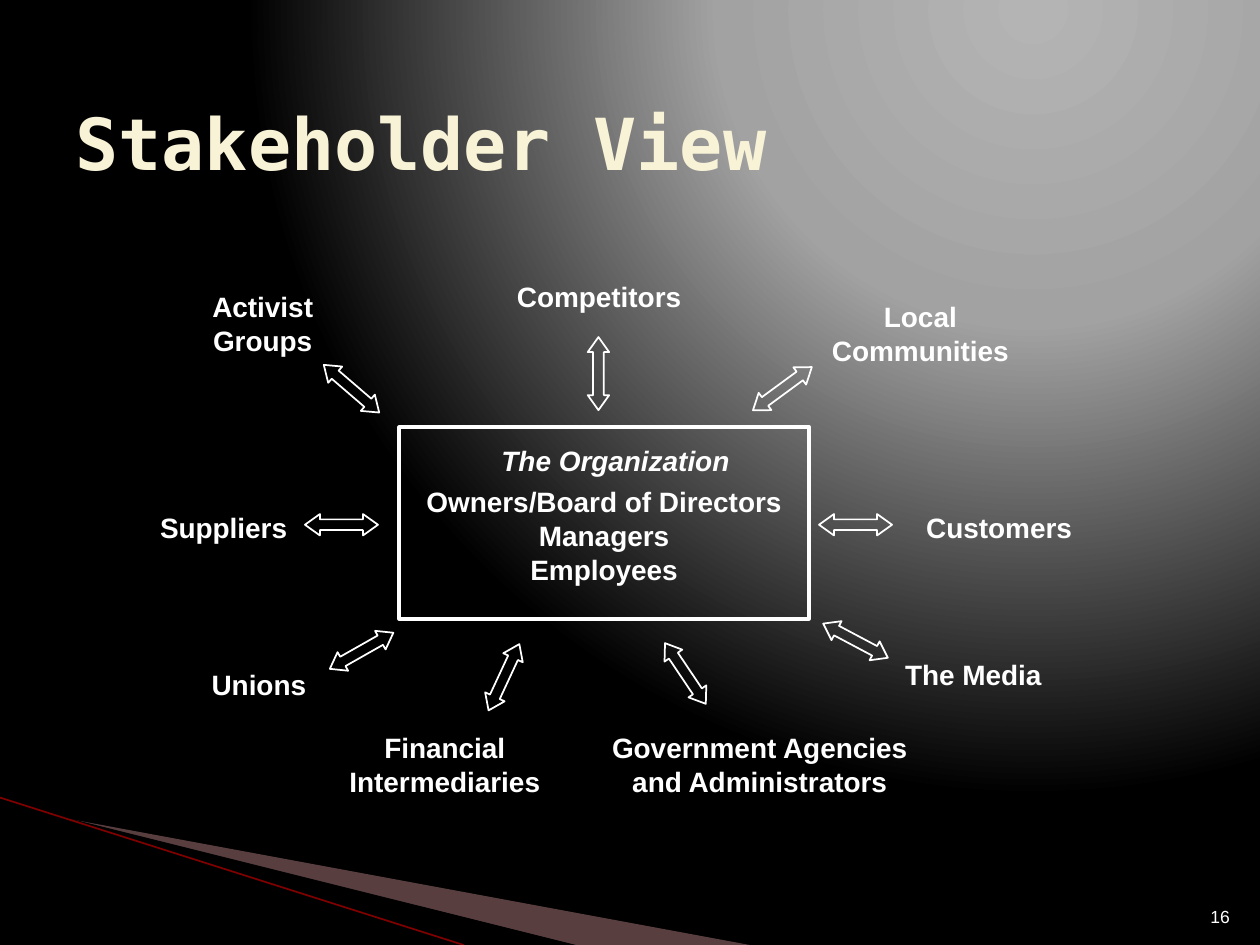
from lxml import etree
from pptx import Presentation
from pptx import util as u
from pptx.dml.color import RGBColor
from pptx.enum import shapes, text
from pptx.oxml.ns import qn

WHITE = RGBColor(0xFF, 0xFF, 0xFF)
BLACK = RGBColor(0, 0, 0)
CREAM = RGBColor(0xF8, 0xF3, 0xD7)
ROSE = RGBColor(0xDD, 0x9D, 0x9D)
DARK_RED = RGBColor(0x80, 0, 0)
LIGHT_GREY = RGBColor(0xB4, 0xB4, 0xB4)
MID_GREY = RGBColor(0xA2, 0xA2, 0xA2)


def write(frame, words, size=16, font="Arial", color=WHITE, bold=True, italic=False,
          align=text.PP_ALIGN.CENTER):
    for index, line in enumerate(words.split("\n")):
        paragraph = frame.paragraphs[0] if index == 0 else frame.add_paragraph()
        paragraph.alignment = align
        run = paragraph.add_run()
        run.text = line
        run.font.size = u.Pt(size)
        run.font.name = font
        run.font.color.rgb = color
        run.font.bold = bold
        run.font.italic = italic


class StakeholderSlide:
    outline = WHITE

    def __init__(self, slide):
        self.slide = slide
        self.shapes = slide.shapes

    def glow(self, stops, focus):
        self.slide.background.fill.gradient()
        gradient = self.slide.element.find(".//" + qn("a:gradFill"))
        for child in list(gradient):
            gradient.remove(child)
        stop_list = etree.SubElement(gradient, qn("a:gsLst"))
        for percent, color in stops:
            stop = etree.SubElement(stop_list, qn("a:gs"), pos=str(percent * 1000))
            etree.SubElement(stop, qn("a:srgbClr"), val=str(color))
        circle = etree.SubElement(gradient, qn("a:path"), path="circle")
        edges = {side: str(percent * 1000) for side, percent in zip("ltrb", focus)}
        etree.SubElement(circle, qn("a:fillToRect"), **edges)

    def wedge(self, points, color, opacity=100):
        corners = [(u.Inches(x), u.Inches(y)) for x, y in points]
        builder = self.shapes.build_freeform(*corners[0])
        builder.add_line_segments(corners[1:], close=True)
        wedge = builder.convert_to_shape()
        wedge.shadow.inherit = False
        wedge.fill.solid()
        wedge.fill.fore_color.rgb = color
        wedge.line.fill.background()
        if opacity < 100:
            tint = wedge.fill._xPr.find(".//" + qn("a:srgbClr"))
            etree.SubElement(tint, qn("a:alpha"), val=str(opacity * 1000))

    def line(self, start, end, color, width):
        ends = [u.Inches(value) for value in (*start, *end)]
        line = self.shapes.add_connector(shapes.MSO_CONNECTOR.STRAIGHT, *ends)
        line.line.color.rgb = color
        line.line.width = u.Pt(width)
        etree.SubElement(line._element.spPr, qn("a:effectLst"))

    def label(self, words, box, anchor=text.MSO_ANCHOR.TOP, wrap=False, **style):
        frame = self.shapes.add_textbox(*map(u.Inches, box)).text_frame
        frame.word_wrap = wrap
        frame.auto_size = (text.MSO_AUTO_SIZE.NONE if wrap
                           else text.MSO_AUTO_SIZE.SHAPE_TO_FIT_TEXT)
        frame.vertical_anchor = anchor
        write(frame, words, **style)

    def outlined(self, kind, box, width):
        shape = self.shapes.add_shape(kind, *map(u.Inches, box))
        shape.shadow.inherit = False
        shape.fill.background()
        shape.line.color.rgb = self.outline
        shape.line.width = u.Pt(width)
        return shape

    def arrow(self, left, top, rotation):
        arrow = self.outlined(shapes.MSO_SHAPE.LEFT_RIGHT_ARROW, (left, top, 0.58, 0.17), 1)
        arrow.adjustments[0] = 0.5
        arrow.adjustments[1] = 0.7
        arrow.rotation = rotation


STAKEHOLDERS = [
    ("Financial\nIntermediaries", (2.67, 5.75, 1.72, 0.64), (3.71, 5.29, 294.9)),
    ("Government Agencies\nand Administrators", (4.75, 5.75, 2.56, 0.64), (5.15, 5.26, 236.1)),
    ("Local\nCommunities", (6.5, 2.33, 1.61, 0.64), (5.92, 3, 323.7)),
    ("Competitors", (4, 2.17, 1.51, 0.37), (4.46, 2.88, 270)),
    ("Suppliers", (1.17, 4, 1.21, 0.37), (2.42, 4.08, 0)),
    ("Customers", (7.25, 4, 1.36, 0.37), (6.5, 4.08, 0)),
    ("Activist\nGroups", (1.58, 2.25, 1.01, 0.64), (2.5, 3, 220.7)),
    ("Unions", (1.58, 5.25, 0.95, 0.37), (2.58, 5.08, 330.4)),
    ("The Media", (7.08, 5.17, 1.29, 0.37), (6.5, 5, 207.9)),
]


def main():
    deck = Presentation()
    deck.slide_width, deck.slide_height = u.Inches(10), u.Inches(7.5)
    view = StakeholderSlide(deck.slides.add_slide(deck.slide_layouts[6]))

    view.glow([(0, LIGHT_GREY), (40, MID_GREY), (100, BLACK)], (65, 0, 0, 98))
    view.wedge([(0.55, 6.5), (5.95, 7.5), (4.56, 7.5)], ROSE, opacity=40)
    view.wedge([(0.53, 6.49), (4.57, 7.5), (3.72, 7.5)], BLACK)
    view.line((0, 6.33), (3.68, 7.5), DARK_RED, 0.95)

    view.label("16", (9.46, 7.01, 0.4, 0.4), text.MSO_ANCHOR.BOTTOM, wrap=True,
               size=10, bold=False, align=text.PP_ALIGN.RIGHT)
    view.label("Stakeholder View", (0.5, 0.5, 9, 1.25), text.MSO_ANCHOR.MIDDLE, wrap=True,
               size=41, font="DejaVu Sans Mono", color=CREAM, align=text.PP_ALIGN.LEFT)

    view.outlined(shapes.MSO_SHAPE.RECTANGLE, (3.17, 3.39, 3.25, 1.52), 2.25)
    view.label("The Organization", (3.88, 3.47, 2.01, 0.37), italic=True)
    view.label("Owners/Board of Directors\nManagers\nEmployees", (3.28, 3.8, 3.03, 0.9))

    for name, box, arrow in STAKEHOLDERS:
        view.label(name, box)
        view.arrow(*arrow)

    deck.save("out.pptx")


if __name__ == "__main__":
    main()
